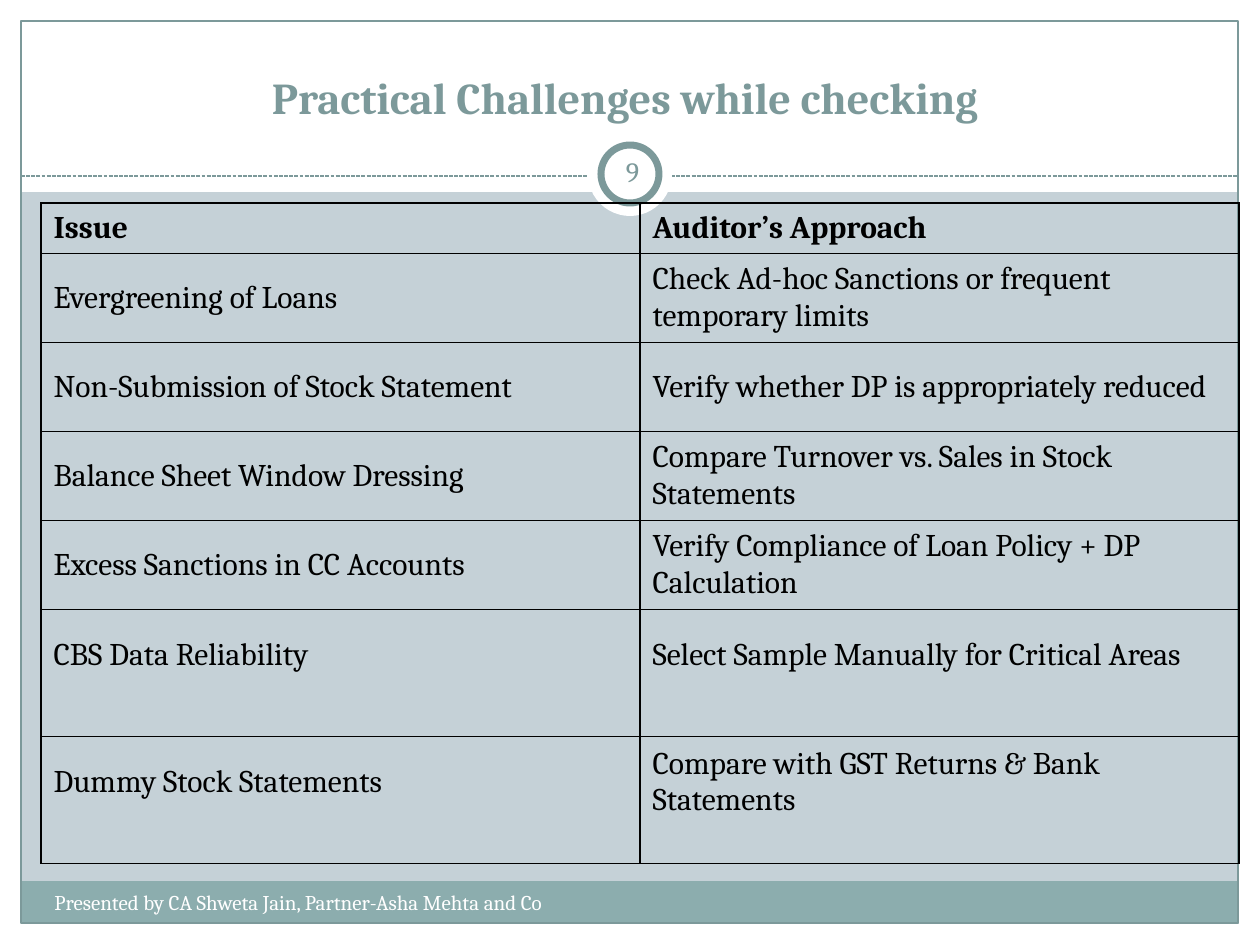
from lxml import etree
from pptx import Presentation, util as u
from pptx.dml.color import RGBColor
from pptx.enum import dml, shapes, text
from pptx.oxml import ns

PX = 914400 / 126
WHITE = RGBColor(0xFF, 0xFF, 0xFF)
BLACK = RGBColor(0, 0, 0)
PALE = RGBColor(0xC5, 0xD1, 0xD7)
TEAL = RGBColor(0x8C, 0xAD, 0xAE)
DARK_TEAL = RGBColor(0x7C, 0x99, 0x9A)


def px(*lengths):
    return [u.Emu(round(n * PX)) for n in lengths]


def write(frame, words, font, align=text.PP_ALIGN.LEFT):
    """Put one formatted paragraph into a text frame."""
    paragraph = frame.paragraphs[0]
    paragraph.alignment = align
    run = paragraph.add_run()
    run.text = words
    run.font.name = "Cambria"
    run.font.size = u.Pt(font["size"])
    run.font.bold = font.get("bold", False)
    run.font.color.rgb = font["color"]


prs = Presentation()
prs.slide_width, prs.slide_height = px(1260, 945)
slide = prs.slides.add_slide(prs.slide_layouts[6])
slide.background.fill.solid()
slide.background.fill.fore_color.rgb = PALE

# Margins, footer band, frame, dashed rule and number badge, back to front
RECT, OVAL = shapes.MSO_SHAPE.RECTANGLE, shapes.MSO_SHAPE.OVAL
backdrop = [
    (RECT, (0, 924, 1260, 21), WHITE, None),
    (RECT, (0, 0, 1260, 192), WHITE, None),
    (RECT, (0, 0, 21, 945), WHITE, None),
    (RECT, (1239, 0, 21, 945), WHITE, None),
    (RECT, (21, 881, 1217, 43), TEAL, None),
    (RECT, (21, 21, 1217, 902), None, 0.75),
    ("rule", (21, 176, 1239, 176), None, 0.75),
    (OVAL, (588, 132, 84, 84), WHITE, None),
    (OVAL, (601, 145, 58, 58), WHITE, 4),
]
for kind, place, fill, line_width in backdrop:
    if kind == "rule":
        part = slide.shapes.add_connector(shapes.MSO_CONNECTOR.STRAIGHT, *px(*place))
        part.line.dash_style = dml.MSO_LINE.SQUARE_DOT
        etree.SubElement(part._element.spPr, ns.qn("a:effectLst"))
    else:
        part = slide.shapes.add_shape(kind, *px(*place))
        part.shadow.inherit = False
        if fill is None:
            part.fill.background()
        else:
            part.fill.solid()
            part.fill.fore_color.rgb = fill
    if line_width:
        part.line.color.rgb = DARK_TEAL
        part.line.width = u.Pt(line_width)
    else:
        part.line.fill.background()

# Title, footer and slide number
CENTER, LEFT = text.PP_ALIGN.CENTER, text.PP_ALIGN.LEFT
MIDDLE, TOP = text.MSO_ANCHOR.MIDDLE, text.MSO_ANCHOR.TOP
captions = [
    ((42, 63, 1166, 67), "Practical Challenges while checking",
     {"size": 25.2, "color": DARK_TEAL, "bold": True}, CENTER, MIDDLE),
    ((42, 883, 662, 50), "Presented by CA Shweta Jain, Partner-Asha Mehta and Co",
     {"size": 12, "color": WHITE}, LEFT, TOP),
    ((601, 141, 63, 60), "9", {"size": 16, "color": DARK_TEAL}, CENTER, MIDDLE),
]
for place, words, font, align, anchor in captions:
    frame = slide.shapes.add_textbox(*px(*place)).text_frame
    frame.word_wrap = True
    frame.vertical_anchor = anchor
    write(frame, words, font, align)

# Table of issues and approaches
issues = [
    ("Issue", "Auditor’s Approach"),
    ("Evergreening of Loans", "Check Ad-hoc Sanctions or frequent temporary limits"),
    ("Non-Submission of Stock Statement", "Verify whether DP is appropriately reduced"),
    ("Balance Sheet Window Dressing", "Compare Turnover vs. Sales in Stock Statements"),
    ("Excess Sanctions in CC Accounts", "Verify Compliance of Loan Policy + DP Calculation"),
    ("CBS Data Reliability", "Select Sample Manually for Critical Areas"),
    ("Dummy Stock Statements", "Compare with GST Returns & Bank Statements"),
]
row_heights = px(50, *[89] * 4, *[127] * 2)
table = slide.shapes.add_table(len(issues), 2, *px(41, 203, 1198, 660)).table
table.horz_banding = False
for column in table.columns:
    column.width = px(599)[0]
for r, (row, height) in enumerate(zip(issues, row_heights)):
    table.rows[r].height = height
    for c, words in enumerate(row):
        cell = table.cell(r, c)
        cell.vertical_anchor = MIDDLE
        if r >= 5:  # the two tall rows keep a free line below the text
            cell.margin_bottom = px(42)[0]
        write(cell.text_frame, words, {"size": 18, "color": BLACK, "bold": r == 0})
        props = cell._tc.get_or_add_tcPr()
        for side in ("lnL", "lnR", "lnT", "lnB"):
            border = etree.SubElement(props, ns.qn(f"a:{side}"), w=str(u.Pt(1)))
            solid = etree.SubElement(border, ns.qn("a:solidFill"))
            etree.SubElement(solid, ns.qn("a:srgbClr"), val=str(BLACK))
        cell.fill.background()

prs.save("out.pptx")
